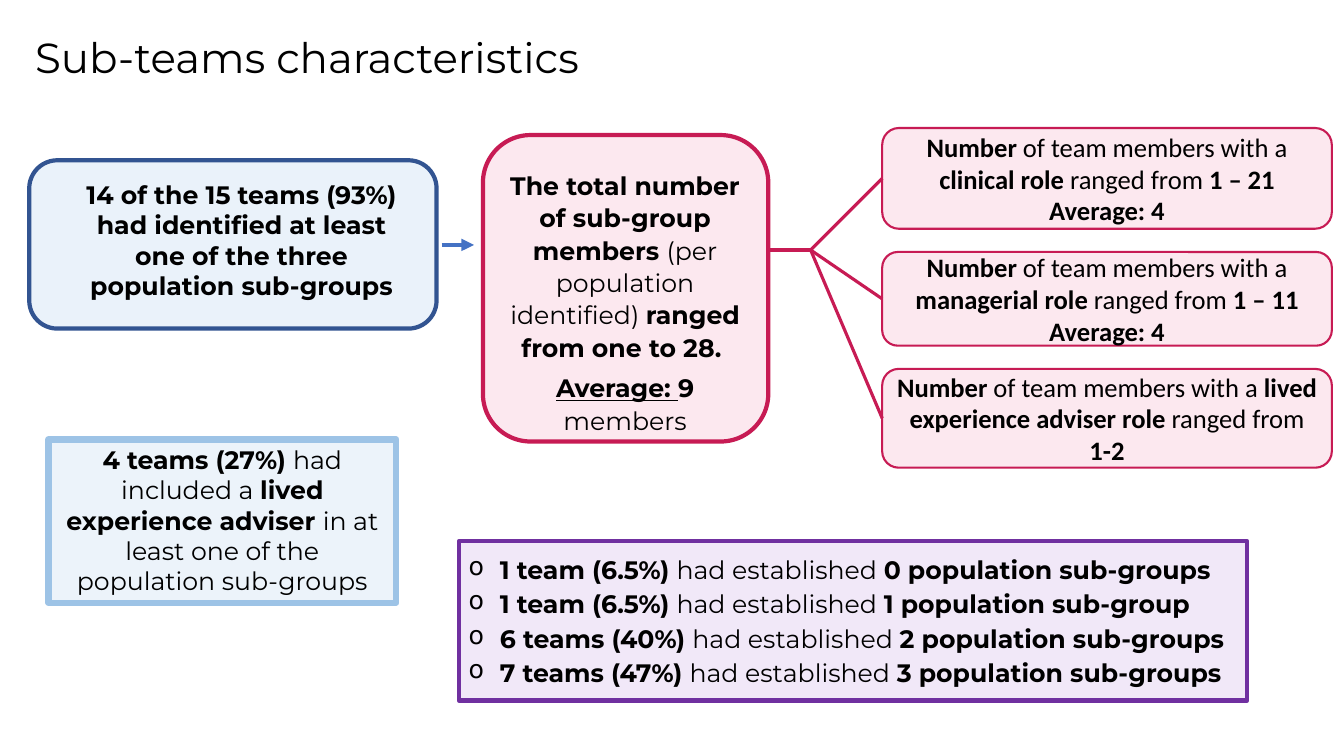
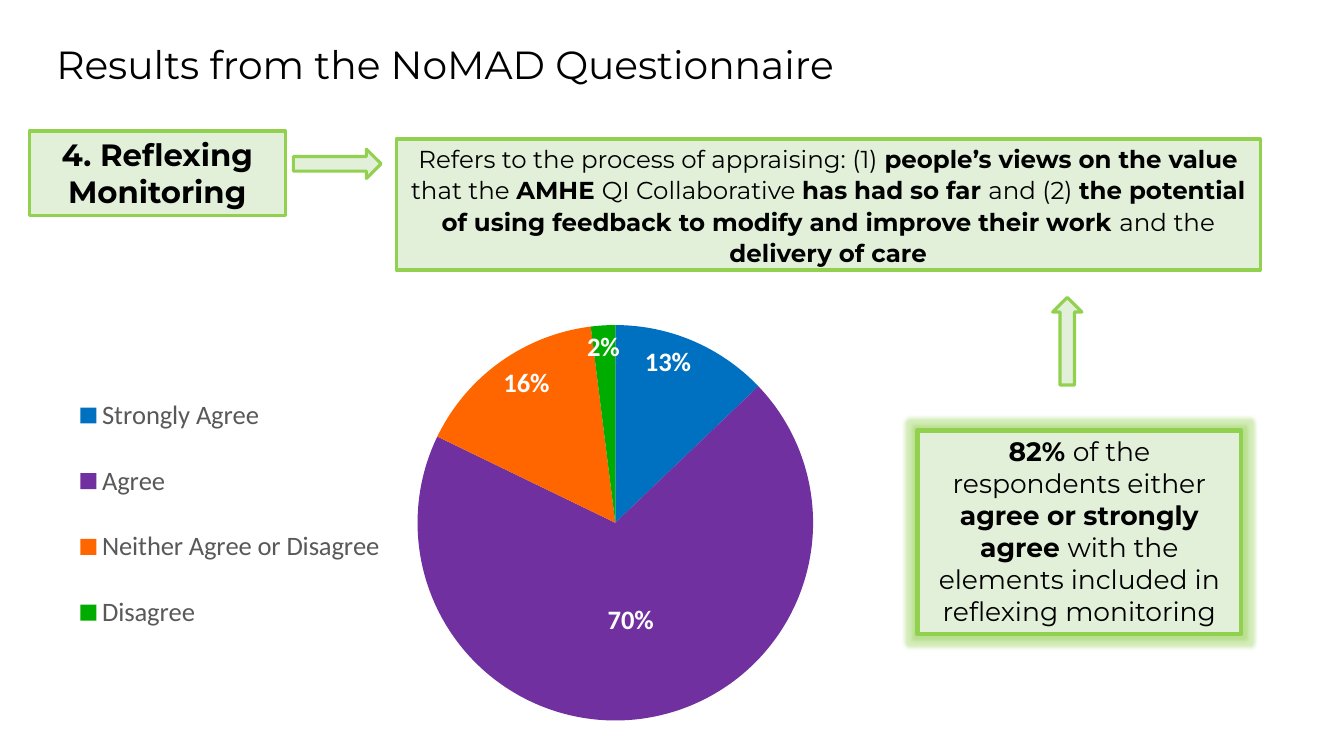
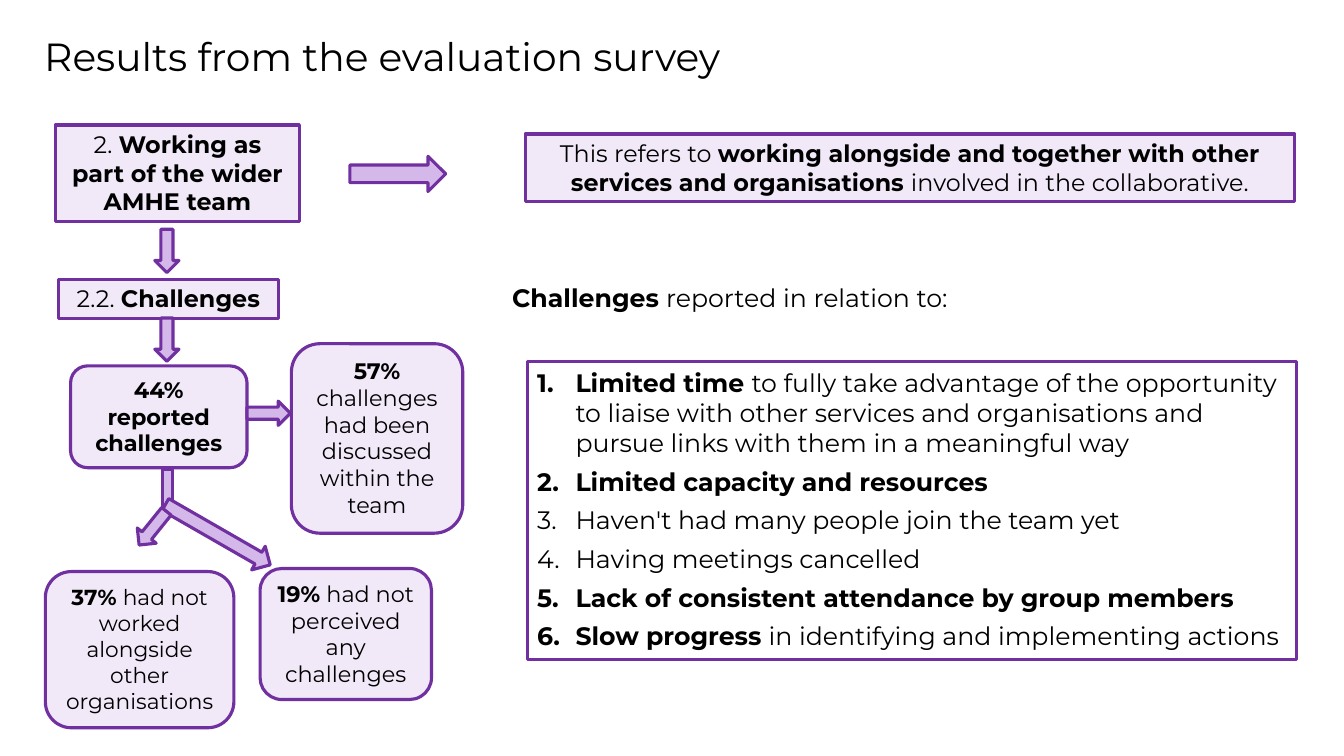
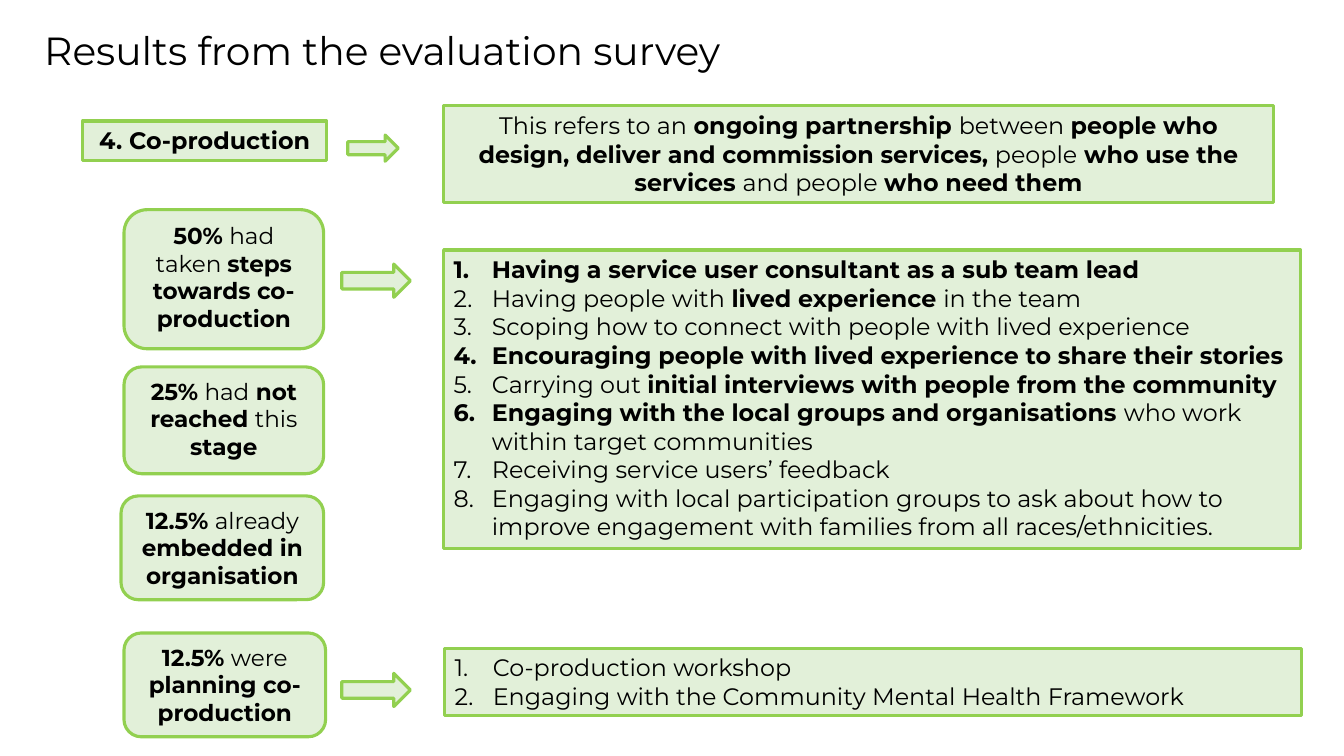
from lxml.etree import SubElement
from pptx import Presentation
from pptx.chart.data import CategoryChartData as ChartData
from pptx.dml.color import RGBColor as RGB
from pptx.enum.chart import XL_CHART_TYPE as CHART, XL_LABEL_POSITION as SPOT, XL_LEGEND_POSITION as SIDE
from pptx.enum.shapes import MSO_CONNECTOR as LINK, MSO_SHAPE as FORM
from pptx.enum.text import MSO_ANCHOR as ANCHOR, PP_ALIGN as ALIGN
from pptx.oxml.ns import qn
from pptx.util import Pt

PX = 9144
FACE = "Montserrat"
PLAIN = "Calibri"
BLACK = RGB(0x00, 0x00, 0x00)
WHITE = RGB(0xFF, 0xFF, 0xFF)
GREY = RGB(0x59, 0x59, 0x59)
NAVY = RGB(0x32, 0x54, 0x91)
BLUE = RGB(0x44, 0x72, 0xC4)
ICE = RGB(0xEA, 0xF2, 0xFA)
MIST = RGB(0xEC, 0xF3, 0xFA)
SKY = RGB(0x9D, 0xC3, 0xE6)
RED = RGB(0xC7, 0x1B, 0x54)
PINK = RGB(0xFC, 0xE8, 0xEF)
PURPLE = RGB(0x70, 0x30, 0xA0)
LILAC = RGB(0xF1, 0xE8, 0xF8)
MAUVE = RGB(0xD5, 0xB8, 0xEA)
GREEN = RGB(0x92, 0xD0, 0x50)
MINT = RGB(0xE2, 0xF0, 0xD9)
SLICES = [RGB(0x00, 0x70, 0xC0), PURPLE, RGB(0xFF, 0x66, 0x00), RGB(0x00, 0xAC, 0x00)]


def write(shape, text, size=17, face=FACE, align=ALIGN.CENTER, anchor=ANCHOR.TOP,
          pad=(10, 5, 10, 5), space=None, after=0, mark=None, hang=38):
    frame = shape.text_frame
    frame.word_wrap = True
    frame.vertical_anchor = anchor
    frame.margin_left, frame.margin_top, frame.margin_right, frame.margin_bottom = [n * PX for n in pad]
    for i, line in enumerate(text.split("\n")):
        par = frame.paragraphs[0] if i == 0 else frame.add_paragraph()
        par.alignment = align
        par.space_after = Pt(after)
        if space:
            par.line_spacing = space
        if mark:
            props = par._p.get_or_add_pPr()
            props.set("marL", str(hang * PX))
            props.set("indent", str(-hang * PX))
            if mark == "1.":
                SubElement(props, qn("a:buAutoNum"), type="arabicPeriod")
            else:
                SubElement(props, qn("a:buChar"), char=mark)
        for j, part in enumerate(line.split("**")):
            for k, piece in enumerate(part.split("\v")):
                if k:
                    par.add_line_break()
                if piece:
                    run = par.add_run()
                    run.text = piece
                    run.font.size = Pt(size)
                    run.font.name = face
                    run.font.bold = j % 2 == 1
                    run.font.color.rgb = BLACK


def box(slide, form, place, fill=None, edge=None, width=2.25, text="", turn=0, **style):
    spot = [n * PX for n in place]
    if form is None:
        shape = slide.shapes.add_textbox(*spot)
    else:
        shape = slide.shapes.add_shape(form, *spot)
        shape.shadow.inherit = False
        shape.rotation = turn
        if fill is None:
            shape.fill.background()
        else:
            shape.fill.solid()
            shape.fill.fore_color.rgb = fill
        shape.line.color.rgb = edge
        shape.line.width = Pt(width)
    if text:
        write(shape, text, **style)
    return shape


deck = Presentation()
deck.slide_width = 1333 * PX
deck.slide_height = 750 * PX

slides = []
for title, left, top, size in [
    ("Sub-teams characteristics", 25, 19, 30),
    ("Results from the NoMAD Questionnaire", 46, 26, 28),
    ("Results from the evaluation survey", 34, 18, 28),
    ("Results from the evaluation survey", 34, 12, 28),
]:
    slide = deck.slides.add_slide(deck.slide_layouts[6])
    box(slide, None, (left, top, 1219, 80), text=title, size=size, space=0.9,
        align=ALIGN.LEFT, anchor=ANCHOR.MIDDLE)
    slides.append(slide)
teams, nomad, wider, coprod = slides

box(teams, FORM.FLOWCHART_ALTERNATE_PROCESS, (29, 159, 404, 167), ICE, NAVY, 3,
    "**14 of the 15 teams (93%) had identified at least one of the three population sub-groups**",
    size=18, pad=(40, 11, 23, 5))
total = box(teams, FORM.FLOWCHART_ALTERNATE_PROCESS, (479, 134, 283, 304), PINK, RED, 3,
            "**The total number of sub-group members **(per population identified) "
            "**ranged from one to 28. **\n**Average: ****9 **members",
            size=18, space=1.07, after=3, pad=(5, 19, 6, 0))
lines = total.text_frame.paragraphs
lines[1].space_before = Pt(3)
lines[1].runs[0].font.underline = True

roles = []
for top, high, text in [
    (127, 100, "**clinical role **ranged from **1 – 21\vAverage: 4**"),
    (250, 93, "**managerial role **ranged from **1 – 11\vAverage: 4**"),
    (366, 98, "**lived experience adviser role **ranged from **1-2**"),
]:
    roles.append(box(teams, FORM.ROUNDED_RECTANGLE, (875, top, 446, high), PINK, RED, 1.5,
                     "**Number **of team members with a " + text,
                     size=19, face=PLAIN, anchor=ANCHOR.MIDDLE))

for start, end, tint, width, role in [
    ((438, 243), (470, 243), BLUE, 3, None),
    ((761, 248), (804, 248), RED, 3, None),
    *[((804, 248), (875, 248), RED, 2.25, role) for role in roles],
]:
    link = teams.shapes.add_connector(LINK.STRAIGHT, *[n * PX for n in start + end])
    link.line.color.rgb = tint
    link.line.width = Pt(width)
    props = link.element.spPr
    if tint == BLUE:
        SubElement(props.find(qn("a:ln")), qn("a:tailEnd"), type="triangle")
    SubElement(props, qn("a:effectLst"))
    if role is not None:
        link.end_connect(role, 1)

box(teams, FORM.RECTANGLE, (48, 436, 345, 162), MIST, SKY, 4.5,
    "**4 teams (27%) **had included a **lived experience adviser **"
    "in at least one of the population sub-groups", size=18)
box(teams, FORM.RECTANGLE, (455, 537, 782, 158), LILAC, PURPLE, 3,
    "**1 team (6.5%) **had established **0 population sub-groups**\n"
    "**1 team (6.5%) **had established **1 population sub-group**\n"
    "**6 teams (40%) **had established **2 population sub-groups**\n"
    "**7 teams (47%) **had established **3 population sub-groups**",
    size=18, align=ALIGN.LEFT, anchor=ANCHOR.MIDDLE, after=3, mark="o", hang=31)

box(nomad, FORM.RECTANGLE, (29, 130, 254, 84), MINT, GREEN,
    text="**4. Reflexing Monitoring**", size=22)
box(nomad, FORM.RECTANGLE, (393, 138, 857, 130), MINT, GREEN,
    text="Refers to the process of appraising: (1) **people’s views on the value **that the "
    "**AMHE **QI Collaborative **has had so far **and (2) **the potential of using feedback "
    "to modify and improve their work **and the **delivery of care**",
    size=17.5, space=1.07, anchor=ANCHOR.MIDDLE)

data = ChartData(number_format='0"%"')
data.categories = ["Strongly Agree", "Agree", "Neither Agree or Disagree", "Disagree"]
data.add_series("Series 1", [13, 70, 16, 2])
chart = nomad.shapes.add_chart(CHART.PIE, *[n * PX for n in (52, 248, 1006, 576)], data).chart
chart.has_title = False
chart.font.name = PLAIN
chart.font.size = Pt(10)
chart.has_legend = True
key = chart.legend
key.position = SIDE.BOTTOM
key.include_in_layout = False
key.font.name = PLAIN
key.font.size = Pt(19)
key.font.color.rgb = GREY

pie = chart.plots[0]
pie.vary_by_categories = True
series = pie.series[0]
for i, tint in enumerate(SLICES):
    fill = series.points[i].format.fill
    fill.solid()
    fill.fore_color.rgb = tint
labels = series.data_labels
labels.show_value = True
for label, spot in [(labels, SPOT.INSIDE_END), (series.points[1].data_label, SPOT.CENTER)]:
    label.font.name = PLAIN
    label.font.size = Pt(19)
    label.font.bold = True
    label.font.color.rgb = WHITE
    label.position = spot

tree = chart.element
for part, inner, sizes in [
    ("c:plotArea", True, (0.36, 0.1, 0.39, 0.74)),
    ("c:legend", False, (0.02, 0.2, 0.31, 0.51)),
]:
    node = tree.find(".//" + qn(part))
    for old in node.findall(qn("c:layout")):
        node.remove(old)
    lay = SubElement(node, qn("c:layout"))
    node.insert(0 if inner else 1, lay)
    hand = SubElement(lay, qn("c:manualLayout"))
    if inner:
        SubElement(hand, qn("c:layoutTarget"), val="inner")
    for name in ("xMode", "yMode"):
        SubElement(hand, qn("c:" + name), val="edge")
    for name, size in zip("xywh", sizes):
        SubElement(hand, qn("c:" + name), val=str(size))

share = box(nomad, FORM.RECTANGLE, (910, 427, 321, 202), MINT, GREEN, 3,
            "**82% **of the respondents either **agree or strongly agree **"
            "with the elements included in reflexing monitoring", size=19)
glow = SubElement(share.element.spPr.find(qn("a:effectLst")), qn("a:glow"), rad="63500")
tint = SubElement(glow, qn("a:srgbClr"), val=str(GREEN))
SubElement(tint, qn("a:alpha"), val="40000")

for place, text, size in [
    ((55, 124, 242, 96), "2. **Working as part of the wider AMHE team**", 17),
    ((521, 133, 763, 67), "This refers to **working alongside and together with other services "
     "and organisations **involved in the collaborative.", 17),
    ((58, 277, 218, 39), "2.2. **Challenges**", 17),
]:
    box(wider, FORM.RECTANGLE, place, LILAC, PURPLE, text=text, size=size)

box(wider, None, (498, 275, 508, 71), text="**Challenges **reported in relation to:",
    size=18, align=ALIGN.LEFT)
box(wider, FORM.RECTANGLE, (523, 359, 763, 295), None, PURPLE,
    text="**Limited time **to fully take advantage of the opportunity to liaise with other "
    "services and organisations and pursue links with them in a meaningful way\n"
    "**Limited capacity and resources**\n"
    "Haven't had many people join the team yet\n"
    "Having meetings cancelled\n"
    "**Lack of consistent attendance by group members**\n"
    "**Slow progress **in identifying and implementing actions",
    size=18, align=ALIGN.LEFT, after=6, mark="1.")

for place, text, size in [
    ((70, 363, 175, 101), "**44% reported challenges**", 16),
    ((289, 341, 170, 188), "**57% **challenges had been discussed within the team", 16),
    ((45, 567, 187, 155), "**37% **had not worked alongside other organisations", 15.5),
    ((258, 564, 170, 130), "**19% **had not perceived any challenges", 16),
]:
    box(wider, FORM.ROUNDED_RECTANGLE, place, LILAC, PURPLE, text=text, size=size)

box(wider, FORM.RECTANGLE, (161, 466, 10, 44), MAUVE, PURPLE)

for place, text in [
    ((82, 120, 242, 39), "**4. Co-production**"),
    ((440, 105, 823, 96), "This refers to an **ongoing partnership **between **people who design, "
     "deliver and commission services,** people** who use the services **and people "
     "**who need them**"),
]:
    box(coprod, FORM.RECTANGLE, place, MINT, GREEN, text=text)

for place, text in [
    ((440, 248, 850, 296),
     "**Having a service user consultant as a sub team lead**\n"
     "Having people with **lived experience **in the team\n"
     "Scoping how to connect with people with lived experience\n"
     "**Encouraging people with lived experience to share their stories**\n"
     "Carrying out **initial interviews with people from the community**\n"
     "**Engaging with the local groups and organisations **who work within target communities\n"
     "Receiving service users’ feedback\n"
     "Engaging with local participation groups to ask about how to improve engagement "
     "with families from all races/ethnicities."),
    ((441, 643, 850, 67),
     "Co-production workshop\nEngaging with the Community Mental Health Framework"),
]:
    box(coprod, FORM.RECTANGLE, place, MINT, GREEN, text=text, align=ALIGN.LEFT, mark="1.")

for place, text in [
    ((123, 208, 198, 138), "**50% **had taken **steps towards co-production**"),
    ((123, 364, 198, 106), "**25% **had** not reached **this** stage**"),
    ((120, 492, 201, 103), "**12.5% **already** embedded in organisation**"),
    ((123, 628, 200, 103), "**12.5% **were** planning co-production**"),
]:
    box(coprod, FORM.ROUNDED_RECTANGLE, place, MINT, GREEN, text=text, size=16.5)

for slide, fill, edge, arrows in [
    (nomad, MINT, GREEN, [((291, 148, 87, 29), 0), ((1015, 324, 87, 29), 270)]),
    (wider, MAUVE, PURPLE, [((347, 155, 95, 35), 0), ((144, 237, 43, 24), 90),
                            ((144, 325, 43, 24), 90), ((245, 398, 43, 24), 0),
                            ((156, 517, 120, 27), 29.9), ((130, 512, 43, 24), 128.9)]),
    (coprod, MINT, GREEN, [((345, 134, 50, 26), 0), ((339, 262, 68, 33), 0),
                           ((339, 668, 68, 33), 0)]),
]:
    for place, turn in arrows:
        box(slide, FORM.RIGHT_ARROW, place, fill, edge, turn=turn)

deck.save("out.pptx")
